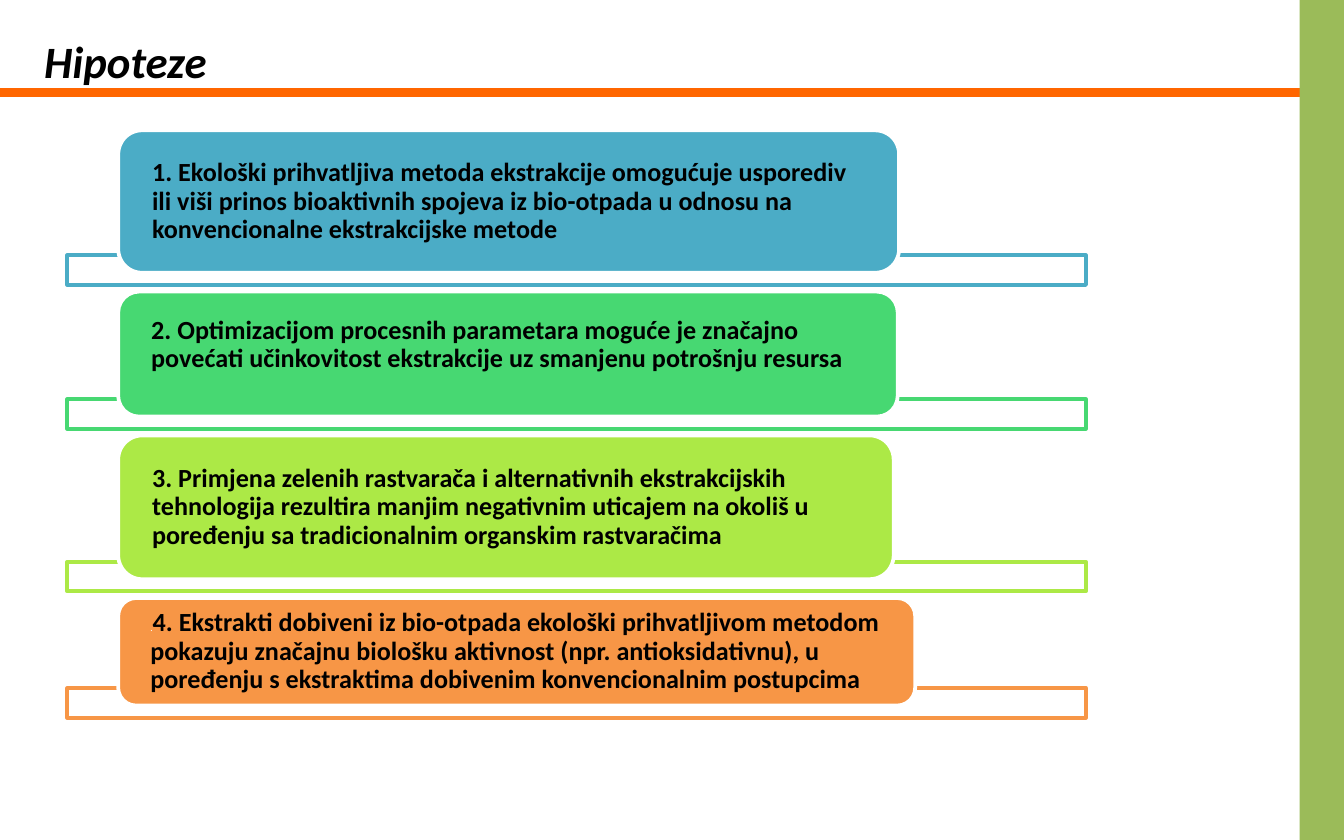
from dataclasses import dataclass

import pptx
import pptx.dml.color
import pptx.enum.shapes
import pptx.enum.text
import pptx.oxml.ns
import pptx.util
from lxml import etree

Inches = pptx.util.Inches
Pt = pptx.util.Pt
RGBColor = pptx.dml.color.RGBColor
MSO_SHAPE = pptx.enum.shapes.MSO_SHAPE

BLACK = RGBColor(0x00, 0x00, 0x00)
WHITE = RGBColor(0xFF, 0xFF, 0xFF)
ORANGE_RULE = RGBColor(0xFF, 0x66, 0x00)
OLIVE = RGBColor(0x9B, 0xBB, 0x59)
BLUE = RGBColor(0x4B, 0xAC, 0xC6)
GREEN = RGBColor(0x47, 0xD8, 0x72)
LIME = RGBColor(0xAC, 0xE9, 0x46)
ORANGE = RGBColor(0xF7, 0x96, 0x46)

FONT = "Calibri"
BAR_LEFT, BAR_WIDTH, BAR_HEIGHT = 0.5, 7.58, 0.22
CARD_LEFT, FIRST_TOP = 0.88, 0.97
OVERLAP, STEP_GAP = 0.13, 0.14


@dataclass(frozen=True)
class Hypothesis:
    text: str
    color: RGBColor
    width: float
    height: float
    bottom_inset: float = 0
    lead: str = ""


HYPOTHESES = [
    Hypothesis("1. Ekološki prihvatljiva metoda ekstrakcije omogućuje usporediv ili viši "
               "prinos bioaktivnih spojeva iz bio-otpada u odnosu na konvencionalne "
               "ekstrakcijske metode", BLUE, 5.81, 1.06),
    Hypothesis("2. Optimizacijom procesnih parametara moguće je značajno povećati "
               "učinkovitost ekstrakcije uz smanjenu potrošnju resursa",
               GREEN, 5.8, 0.93, bottom_inset=0.14),
    Hypothesis("3. Primjena zelenih rastvarača i alternativnih ekstrakcijskih tehnologija "
               "rezultira manjim negativnim uticajem na okoliš u poređenju sa "
               "tradicionalnim organskim rastvaračima", LIME, 5.77, 1.07),
    Hypothesis("4. Ekstrakti dobiveni iz bio-otpada ekološki prihvatljivom metodom pokazuju "
               "značajnu biološku aktivnost (npr. antioksidativnu), u poređenju s "
               "ekstraktima dobivenim konvencionalnim postupcima",
               ORANGE, 5.93, 0.8, lead="."),
]


def add_run(p, text: str, *, size: float, color: RGBColor = BLACK,
            bold: bool = True, italic: bool = False) -> None:
    r = p.add_run()
    r.text = text
    r.font.name = FONT
    r.font.size = Pt(size)
    r.font.bold = bold
    r.font.italic = italic
    r.font.color.rgb = color


def add_box(s, kind: MSO_SHAPE, left: float, top: float, width: float, height: float,
            fill: RGBColor, line: RGBColor | None = None):
    sp = s.shapes.add_shape(kind, Inches(left), Inches(top), Inches(width), Inches(height))
    sp.shadow.inherit = False
    sp.fill.solid()
    sp.fill.fore_color.rgb = fill
    if line is None:
        sp.line.fill.background()
    else:
        sp.line.color.rgb = line
        sp.line.width = Pt(2)
    return sp


def add_hypothesis(s, item: Hypothesis, top: float) -> None:
    add_box(s, MSO_SHAPE.RECTANGLE, BAR_LEFT, top + item.height - OVERLAP,
            BAR_WIDTH, BAR_HEIGHT, WHITE, item.color)
    sp = add_box(s, MSO_SHAPE.ROUNDED_RECTANGLE, CARD_LEFT, top,
                 item.width, item.height, item.color, WHITE)
    tf = sp.text_frame
    tf.word_wrap = True
    tf.vertical_anchor = pptx.enum.text.MSO_ANCHOR.MIDDLE
    tf.margin_left = tf.margin_right = Inches(0.2)
    tf.margin_top = 0
    tf.margin_bottom = Inches(item.bottom_inset)
    p = tf.paragraphs[0]
    p.alignment = pptx.enum.text.PP_ALIGN.LEFT
    p.line_spacing = 0.9
    if item.lead:
        add_run(p, item.lead, size=5, color=WHITE, bold=False)
    add_run(p, item.text, size=14)


def add_title(s) -> None:
    sp = s.shapes.add_textbox(Inches(0.23), Inches(0.2), Inches(2.58), Inches(0.5))
    sp.text_frame.word_wrap = True
    add_run(sp.text_frame.paragraphs[0], "Hipoteze", size=24, italic=True)


def add_rule(s) -> None:
    sp = s.shapes.add_connector(pptx.enum.shapes.MSO_CONNECTOR.STRAIGHT,
                                Inches(0), Inches(0.69), Inches(10), Inches(0.69))
    sp.line.color.rgb = ORANGE_RULE
    sp.line.width = Pt(4.5)
    etree.SubElement(sp._element.spPr, pptx.oxml.ns.qn("a:effectLst"))


def main() -> None:
    prs = pptx.Presentation()
    prs.slide_width, prs.slide_height = Inches(10), Inches(6.25)
    s = prs.slides.add_slide(prs.slide_layouts[6])
    add_title(s)
    add_rule(s)
    add_box(s, MSO_SHAPE.RECTANGLE, 9.67, 0, 0.33, 6.25, OLIVE)
    top = FIRST_TOP
    for item in HYPOTHESES:
        add_hypothesis(s, item, top)
        top += item.height + STEP_GAP
    prs.save("out.pptx")


if __name__ == "__main__":
    main()
